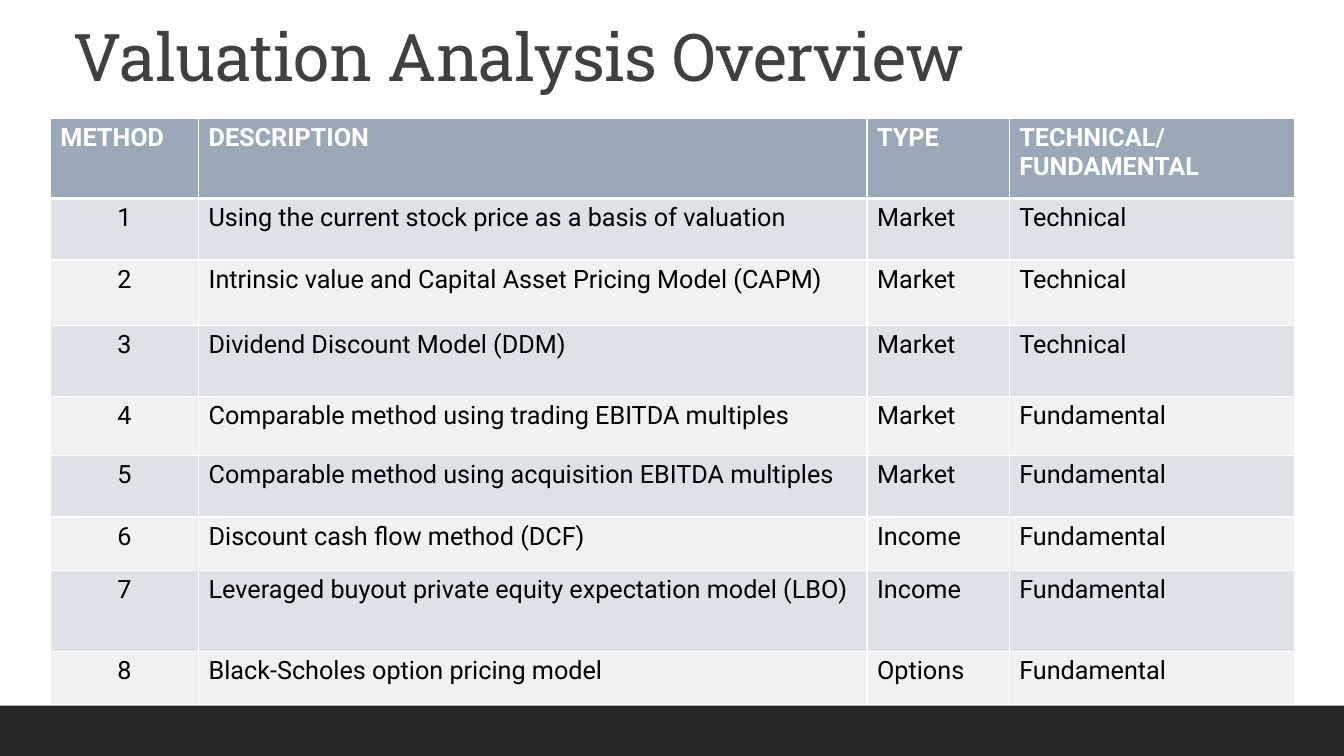
import dataclasses

import lxml.etree
import pptx
import pptx.dml.color
import pptx.enum.shapes
import pptx.enum.text
import pptx.oxml.ns
import pptx.util

Inches = pptx.util.Inches
ALIGN = pptx.enum.text.PP_ALIGN


@dataclasses.dataclass(frozen=True)
class Theme:
    title_font: str = "Roboto Slab"
    body_font: str = "Roboto"
    title_size: float = 47
    body_size: float = 18
    title_color: str = "404040"
    body_color: str = "000000"
    light: str = "FFFFFF"
    header_fill: str = "9BA8B7"
    band_fills: tuple = ("DEE1E6", "EFF1F3")
    footer_fill: str = "262626"


THEME = Theme()

HEADERS = ("METHOD", "DESCRIPTION", "TYPE", "TECHNICAL/ FUNDAMENTAL")
METHODS = (
    ("Using the current stock price as a basis of valuation", "Market", "Technical"),
    ("Intrinsic value and Capital Asset Pricing Model (CAPM)", "Market", "Technical"),
    ("Dividend Discount Model (DDM)", "Market", "Technical"),
    ("Comparable method using trading EBITDA multiples", "Market", "Fundamental"),
    ("Comparable method using acquisition EBITDA multiples", "Market", "Fundamental"),
    ("Discount cash flow method (DCF)", "Income", "Fundamental"),
    ("Leveraged buyout private equity expectation model (LBO)", "Income", "Fundamental"),
    ("Black-Scholes option pricing model", "Options", "Fundamental"),
)
COLUMN_WIDTHS = (1.47, 6.63, 1.41, 2.83)
ROW_HEIGHTS = (0.8, 0.61, 0.65, 0.7, 0.59, 0.61, 0.53, 0.8, 0.53)


def rgb(color):
    return pptx.dml.color.RGBColor.from_string(color)


def write_text(frame, text, *, font=THEME.body_font, size=THEME.body_size,
               color=THEME.body_color, bold=False, align=ALIGN.LEFT,
               line_spacing=None, letter_spacing=None):
    """Fill a text frame with one formatted paragraph; letter spacing is in points."""
    paragraph = frame.paragraphs[0]
    paragraph.alignment = align
    paragraph.line_spacing = line_spacing
    run = paragraph.add_run()
    run.text = text
    run.font.name = font
    run.font.size = pptx.util.Pt(size)
    run.font.bold = bold
    run.font.color.rgb = rgb(color)
    if letter_spacing is not None:
        run.font._element.set("spc", str(round(letter_spacing * 100)))


def add_footer_bar(slide):
    shape = slide.shapes.add_shape(
        pptx.enum.shapes.MSO_SHAPE.RECTANGLE,
        Inches(0), Inches(7), Inches(13.33), Inches(0.5))
    shape.shadow.inherit = False
    shape.fill.solid()
    shape.fill.fore_color.rgb = rgb(THEME.footer_fill)
    shape.line.fill.background()


def set_title(slide, text):
    title = slide.shapes.title
    title.left, title.top = Inches(0.63), Inches(0.17)
    title.width, title.height = Inches(10), Inches(0.83)
    frame = title.text_frame
    frame.word_wrap = True
    frame.auto_size = pptx.enum.text.MSO_AUTO_SIZE.NONE
    frame.vertical_anchor = pptx.enum.text.MSO_ANCHOR.BOTTOM
    write_text(frame, text, font=THEME.title_font, size=THEME.title_size,
               color=THEME.title_color, line_spacing=0.9, letter_spacing=-0.5)


def set_borders(cell, **widths):
    """Draw cell borders; keys are L, R, T, B and values are points."""
    properties = cell._tc.get_or_add_tcPr()
    qualified = pptx.oxml.ns.qn
    for side, width in widths.items():
        line = lxml.etree.SubElement(properties, qualified(f"a:ln{side}"),
                                     w=str(pptx.util.Pt(width)))
        fill = lxml.etree.SubElement(line, qualified("a:solidFill"))
        lxml.etree.SubElement(fill, qualified("a:srgbClr"), val=THEME.light)


def format_cell(cell, text, fill, top=1, bottom=1, **text_format):
    set_borders(cell, L=1, R=1, T=top, B=bottom)
    cell.fill.solid()
    cell.fill.fore_color.rgb = rgb(fill)
    write_text(cell.text_frame, text, **text_format)


def add_method_table(slide):
    table = slide.shapes.add_table(
        len(ROW_HEIGHTS), len(COLUMN_WIDTHS), Inches(0.5), Inches(1.17),
        Inches(sum(COLUMN_WIDTHS)), Inches(sum(ROW_HEIGHTS))).table
    for column, width in zip(table.columns, COLUMN_WIDTHS):
        column.width = Inches(width)
    for row, height in zip(table.rows, ROW_HEIGHTS):
        row.height = Inches(height)

    for column, header in enumerate(HEADERS):
        format_cell(table.cell(0, column), header, THEME.header_fill,
                    bottom=3, color=THEME.light, bold=True)
    for number, method in enumerate(METHODS, start=1):
        fill = THEME.band_fills[(number - 1) % 2]
        for column, text in enumerate((str(number), *method)):
            format_cell(table.cell(number, column), text, fill,
                        top=3 if number == 1 else 1,
                        align=ALIGN.LEFT if column else ALIGN.CENTER)


def main():
    presentation = pptx.Presentation()
    presentation.slide_width = Inches(13.33)
    presentation.slide_height = Inches(7.5)
    title_only = presentation.slide_layouts.get_by_name("Title Only")
    slide = presentation.slides.add_slide(title_only)
    add_footer_bar(slide)
    set_title(slide, "Valuation Analysis Overview")
    add_method_table(slide)
    presentation.save("out.pptx")


if __name__ == "__main__":
    main()
